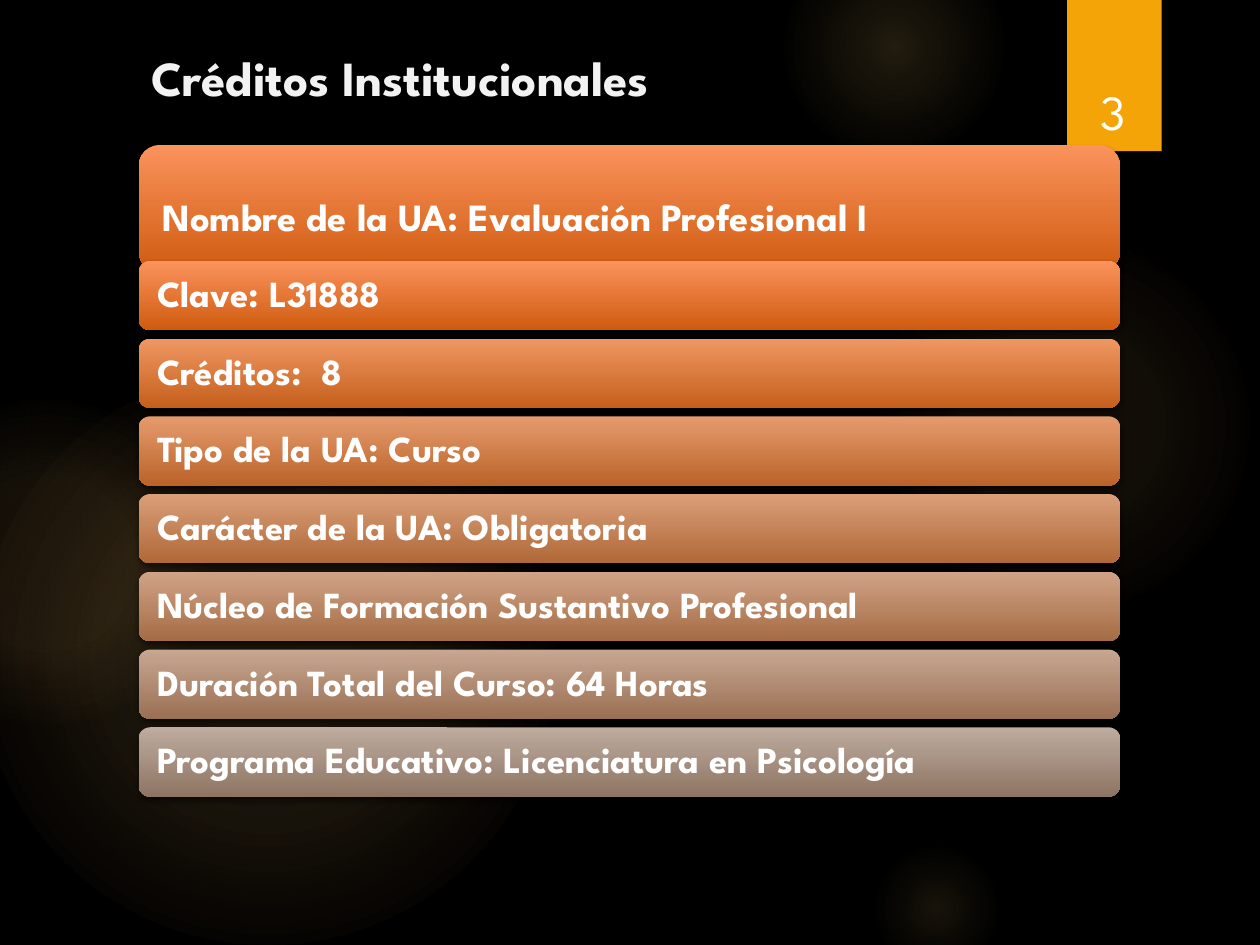
"""Build the institutional credits slide: glowing backdrop, title and stacked bars."""
from typing import NamedTuple

from lxml.etree import SubElement
from pptx import Presentation
from pptx.dml.color import RGBColor
from pptx.enum.shapes import MSO_SHAPE
from pptx.enum.text import MSO_ANCHOR, PP_ALIGN
from pptx.oxml import parse_xml
from pptx.oxml.ns import nsdecls, qn
from pptx.util import Inches, Pt

FONT = "League Spartan"
GLOW = "FAC96A"
BAR_LEFT, BAR_WIDTH = 1.1, 7.79
ROW_TOP, ROW_HEIGHT, ROW_PITCH = 2.07, 0.55, 0.617


class Glow(NamedTuple):
    left: float
    top: float
    size: float
    stops: tuple[tuple[int, int], ...]


class Bar(NamedTuple):
    text: str
    light: str
    dark: str


GLOWS = [
    Glow(6.89, 1.83, 3.08, ((0, 7), (36, 6), (69, 0))),
    Glow(6.22, -0.5, 1.75, ((0, 14), (36, 7), (73, 0))),
    Glow(6.89, 6.67, 1.08, ((0, 10), (31, 5), (66, 0))),
    Glow(-0.17, 2.92, 4.58, ((0, 11), (36, 10), (75, 0))),
    Glow(-0.92, 3.17, 2.58, ((0, 8), (36, 8), (72, 0))),
]
HEADER = Bar("Nombre de la UA: Evaluación Profesional I", "FB935D", "CF5B0F")
ROWS = [
    Bar("Clave: L31888", "FB935D", "CF5B0F"),
    Bar("Créditos:  8", "F09763", "C55F1C"),
    Bar("Tipo de la UA: Curso", "E59B6D", "BB6329"),
    Bar("Carácter de la UA: Obligatoria", "DA9F79", "B06837"),
    Bar("Núcleo de Formación Sustantivo Profesional", "D0A386", "A56C45"),
    Bar("Duración Total del Curso: 64 Horas", "C7A792", "9A7054"),
    Bar("Programa Educativo: Licenciatura en Psicología", "BEAC9F", "8E7463"),
]


def paint(color, value: str) -> None:
    """Set a colour format from a hex string."""
    color.rgb = RGBColor.from_string(value)


def add_shape(slide, kind, left: float, top: float, width: float, height: float):
    """Add a preset shape without line or inherited shadow."""
    sp = slide.shapes.add_shape(
        kind, Inches(left), Inches(top), Inches(width), Inches(height))
    sp.shadow.inherit = False
    sp.line.fill.background()
    return sp


def add_shadow(sp) -> None:
    """Give a shape a soft shadow below it."""
    effects = sp._element.spPr.find(qn("a:effectLst"))
    shadow = SubElement(effects, qn("a:outerShdw"), blurRad=str(Pt(3)),
                        dist=str(Pt(2)), dir="5400000", rotWithShape="0")
    color = SubElement(shadow, qn("a:srgbClr"), val="000000")
    SubElement(color, qn("a:alpha"), val="45000")


def write(shape, text: str, size: int, color: str, bold: bool = True,
          align=PP_ALIGN.LEFT, anchor=MSO_ANCHOR.MIDDLE):
    """Write one paragraph into a shape and return its text frame."""
    tf = shape.text_frame
    tf.word_wrap = True
    tf.vertical_anchor = anchor
    p = tf.paragraphs[0]
    p.text = text
    p.alignment = align
    p.font.name, p.font.size, p.font.bold = FONT, Pt(size), bold
    paint(p.font.color, color)
    return tf


def add_glow(slide, glow: Glow) -> None:
    """Add a circle that fades out from its centre."""
    sp = add_shape(slide, MSO_SHAPE.OVAL, glow.left, glow.top, glow.size, glow.size)
    sp.fill.background()
    stops = "".join(
        f'<a:gs pos="{pos * 1000}"><a:srgbClr val="{GLOW}">'
        f'<a:alpha val="{alpha * 1000}"/></a:srgbClr></a:gs>'
        for pos, alpha in glow.stops)
    fill = parse_xml(
        f'<a:gradFill {nsdecls("a")} rotWithShape="1"><a:gsLst>{stops}</a:gsLst>'
        '<a:path path="circle"><a:fillToRect l="50000" t="50000" r="50000" b="50000"/>'
        '</a:path></a:gradFill>')
    spPr = sp._element.spPr
    spPr.replace(spPr.find(qn("a:noFill")), fill)


def add_bar(slide, bar: Bar, top: float, height: float, size: int,
            inset: float, drop: float = 0) -> None:
    """Add a rounded gradient bar holding its text, moved down by drop."""
    sp = add_shape(slide, MSO_SHAPE.ROUNDED_RECTANGLE, BAR_LEFT, top, BAR_WIDTH, height)
    sp.fill.gradient()
    sp.fill.gradient_angle = 270
    for stop, value, pos in zip(sp.fill.gradient_stops, (bar.light, bar.dark), (0, 1)):
        paint(stop.color, value)
        stop.position = pos
    add_shadow(sp)
    tf = write(sp, bar.text, size, "FFFFFF")
    tf.margin_left = tf.margin_right = Inches(inset)
    tf.margin_top, tf.margin_bottom = Inches(0.09 + 2 * drop), Inches(0.09)
    tf.paragraphs[0].line_spacing = 0.9


def main() -> None:
    """Assemble and save the slide."""
    prs = Presentation()
    prs.slide_width, prs.slide_height = Inches(10), Inches(7.5)
    slide = prs.slides.add_slide(prs.slide_layouts[5])
    slide.background.fill.solid()
    paint(slide.background.fill.fore_color, "000000")

    for glow in GLOWS:
        add_glow(slide, glow)

    tab = add_shape(slide, MSO_SHAPE.RECTANGLE, 8.47, 0, 0.75, 1.2)
    tab.fill.solid()
    paint(tab.fill.fore_color, "F5A408")
    add_shadow(tab)

    title = slide.shapes.title
    title.left, title.top = Inches(BAR_LEFT), Inches(0.33)
    title.width, title.height = Inches(BAR_WIDTH), Inches(1.01)
    write(title, "Créditos Institucionales", 28, "F2F2F2", anchor=MSO_ANCHOR.TOP)

    add_bar(slide, HEADER, 1.15, 1.01, 22, 0.14, drop=0.08)
    for i, row in enumerate(ROWS):
        add_bar(slide, row, ROW_TOP + i * ROW_PITCH, ROW_HEIGHT, 21, 0.12)

    number = slide.shapes.add_textbox(
        Inches(8.49), Inches(0.32), Inches(0.69), Inches(0.84))
    write(number, "3", 28, "FFFFFF", bold=False,
          align=PP_ALIGN.CENTER, anchor=MSO_ANCHOR.BOTTOM)

    prs.save("out.pptx")


if __name__ == "__main__":
    main()
